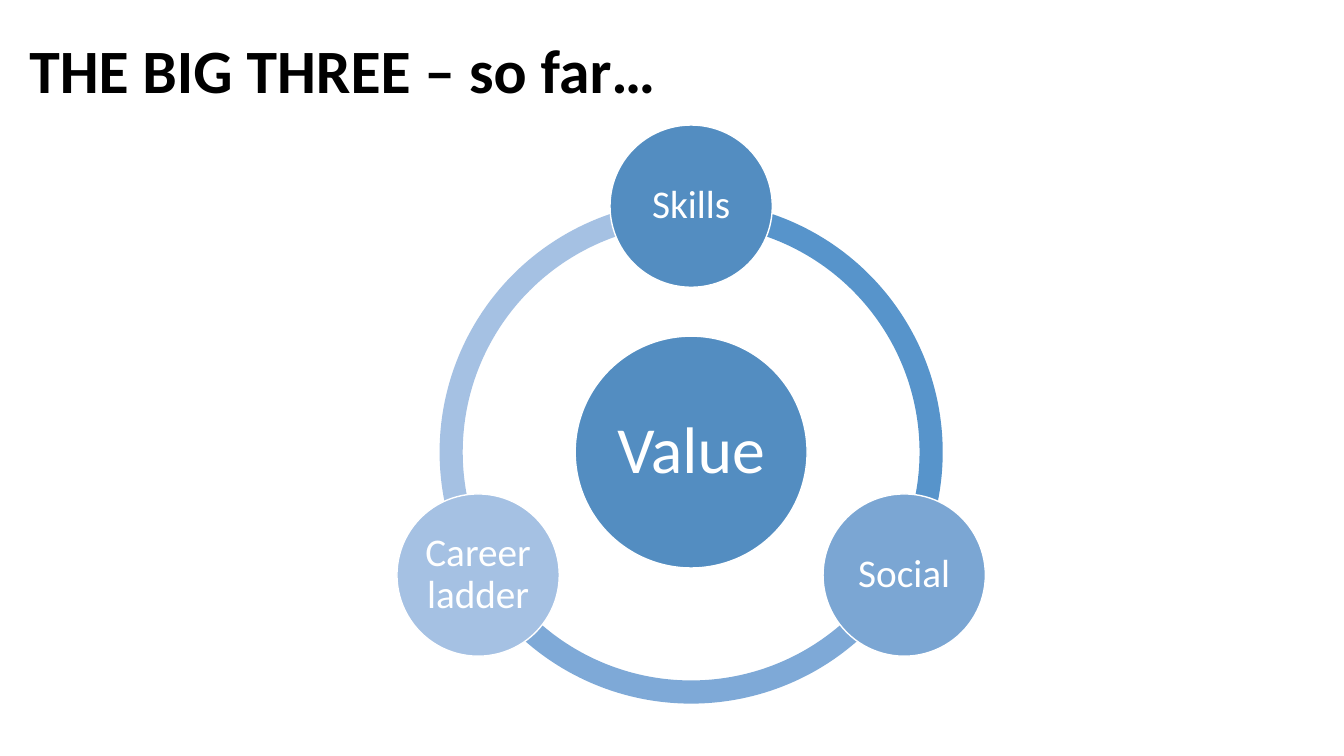
import math

from pptx import Presentation
from pptx import util as u
from pptx.dml.color import RGBColor
from pptx.enum import shapes, text

PX = 9144  # EMU per px, 100 px to the inch
FONT = "Calibri"
COLORS = {
    "black": "000000",
    "white": "FFFFFF",
    "hub": "538DC1",
    "social": "7BA6D3",
    "ladder": "A5C1E3",
    "arc_right": "5794CB",
    "arc_bottom": "7EA9D7",
}
# Label, angle in degrees clockwise from the right, circle colour, colour of the arc that follows
SATELLITES = [
    ("Skills", 270, "hub", "arc_right"),
    ("Social", 30, "social", "arc_bottom"),
    ("Career ladder", 150, "ladder", "ladder"),
]


def px(length):
    return u.Emu(round(length * PX))


def color(name):
    return RGBColor.from_string(COLORS[name])


def format_text(frame, size, color_name, align, bold=False):
    frame.word_wrap = True
    frame.auto_size = text.MSO_AUTO_SIZE.NONE
    frame.vertical_anchor = text.MSO_ANCHOR.MIDDLE
    paragraph = frame.paragraphs[0]
    paragraph.alignment = align
    paragraph.line_spacing = 0.9
    font = paragraph.runs[0].font
    font.name, font.size, font.bold = FONT, u.Pt(size), bold
    font.color.rgb = color(color_name)


def add_centered(slide, kind, center_x, center_y, diameter, fill):
    shape = slide.shapes.add_shape(
        kind, px(center_x - diameter / 2), px(center_y - diameter / 2), px(diameter), px(diameter))
    shape.shadow.inherit = False
    shape.fill.solid()
    shape.fill.fore_color.rgb = color(fill)
    shape.line.fill.background()
    return shape


def add_circle(slide, center_x, center_y, diameter, fill, label, size, inset):
    circle = add_centered(slide, shapes.MSO_SHAPE.OVAL, center_x, center_y, diameter, fill)
    circle.line.color.rgb = color("white")
    circle.line.width = u.Pt(1)
    frame = circle.text_frame
    frame.margin_left = frame.margin_right = frame.margin_top = frame.margin_bottom = px(inset)
    frame.text = label
    format_text(frame, size, "white", text.PP_ALIGN.CENTER)


def add_title(slide, left, top, width, height):
    title = slide.shapes.title
    title.left, title.top, title.width, title.height = map(px, (left, top, width, height))
    title.text_frame.text = "THE BIG THREE – so far…"
    format_text(title.text_frame, 44, "black", text.PP_ALIGN.LEFT, bold=True)


def add_radial_cycle(slide, left, top, diameter):
    center_x, center_y = left + diameter / 2, top + diameter / 2
    orbit = 244

    # Ring: one arc from each satellite to the next
    for _, angle, _, arc_color in reversed(SATELLITES):
        arc = add_centered(
            slide, shapes.MSO_SHAPE.BLOCK_ARC, center_x, center_y, diameter, arc_color)
        # Angles are stored in 60000ths of a degree, adjustments in 100000ths
        arc.adjustments[0] = angle * 0.6
        arc.adjustments[1] = (angle + 120) % 360 * 0.6
        arc.adjustments[2] = 0.046

    # Hub and satellites
    add_circle(slide, center_x, center_y, 230, "hub", "Value", 47, 7)
    for label, angle, fill, _ in SATELLITES:
        x = center_x + orbit * math.cos(math.radians(angle))
        y = center_y + orbit * math.sin(math.radians(angle))
        add_circle(slide, x, y, 161, fill, label, 28, 4)


def main():
    presentation = Presentation()
    presentation.slide_width, presentation.slide_height = px(1333), px(750)
    slide = presentation.slides.add_slide(presentation.slide_layouts.get_by_name("Title Only"))
    add_title(slide, 19, 0, 1150, 145)
    add_radial_cycle(slide, 436, 199, 499)
    presentation.save("out.pptx")


if __name__ == "__main__":
    main()
